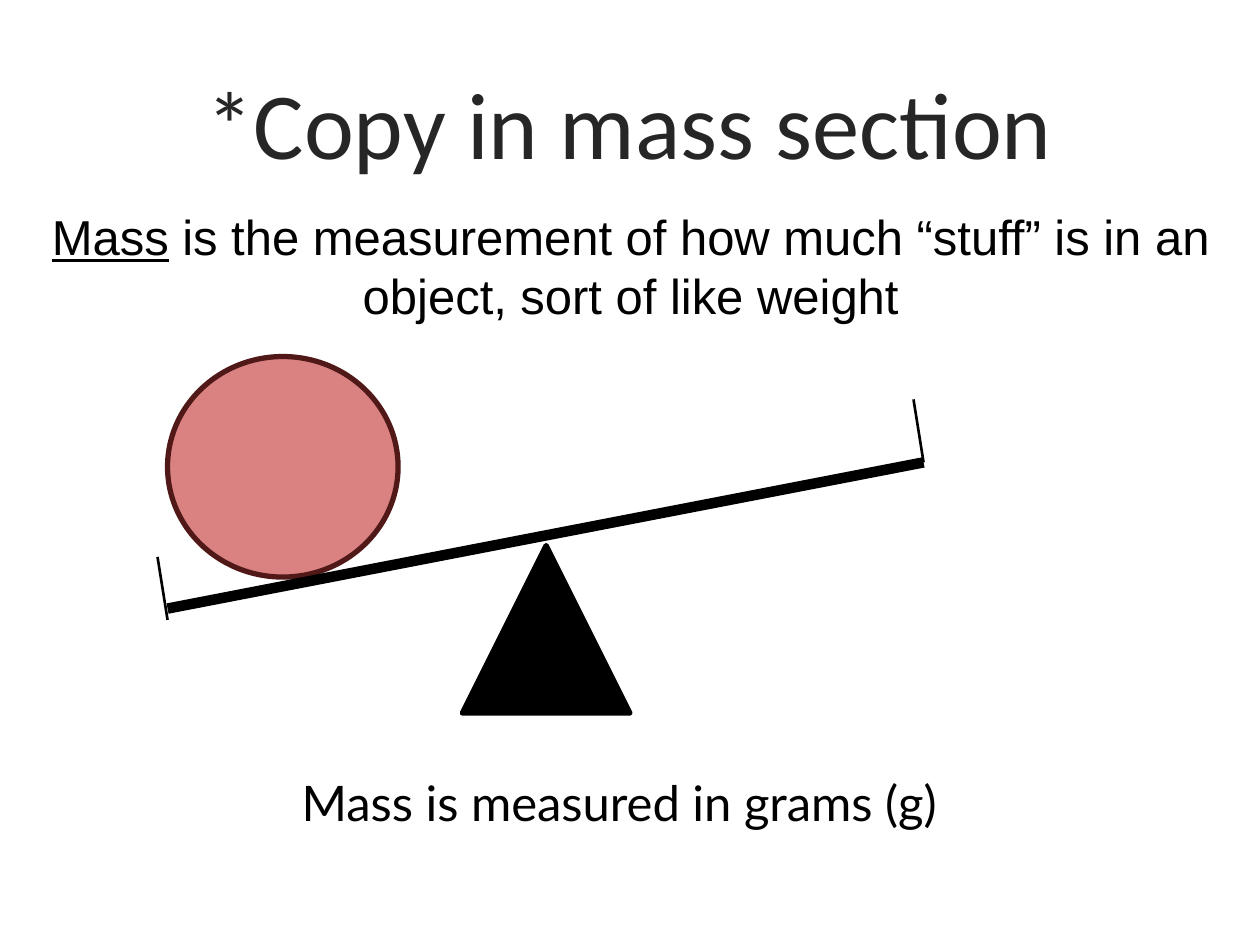
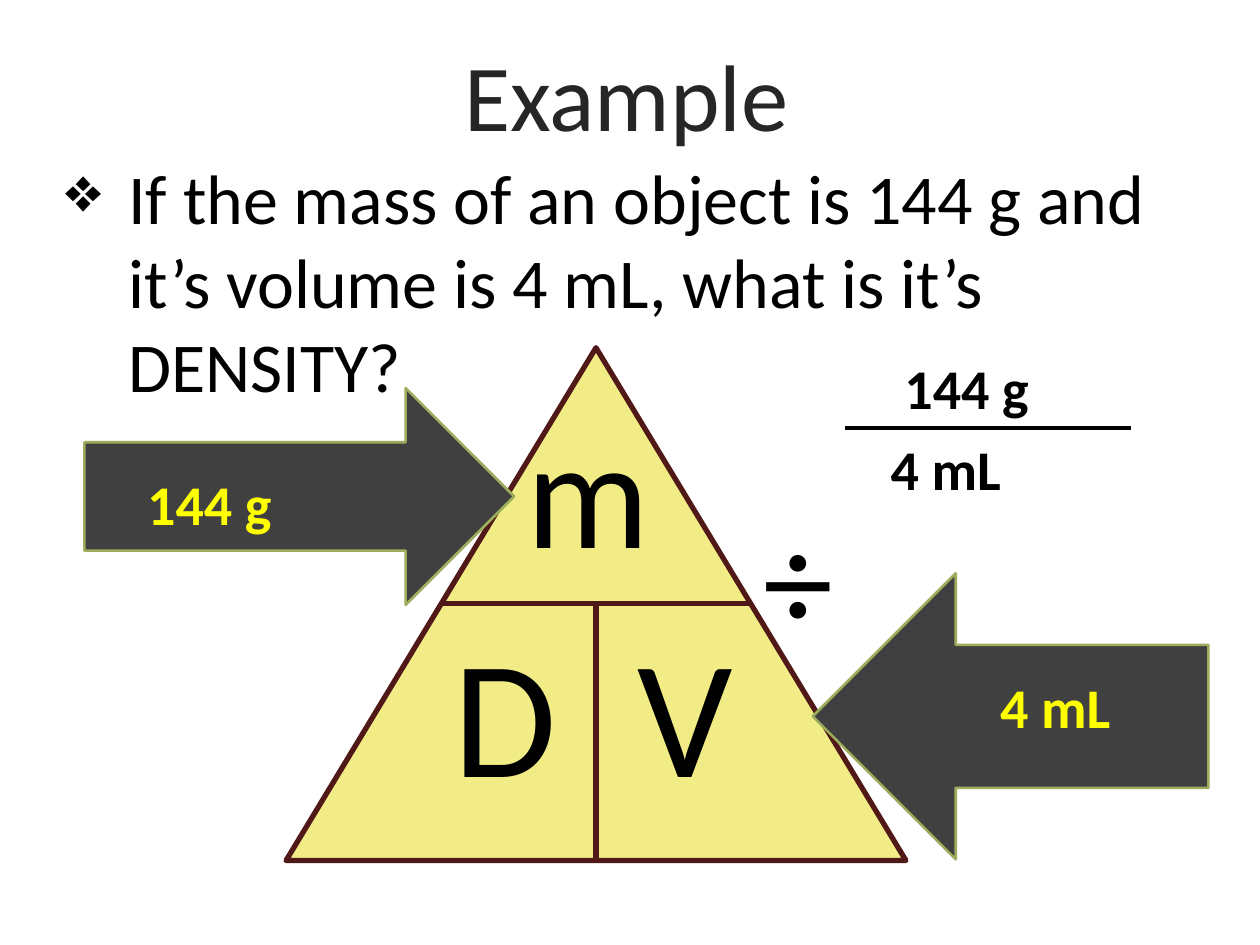
from dataclasses import dataclass

from lxml import etree
from pptx import Presentation
from pptx import util as u
from pptx.dml.color import RGBColor
from pptx.enum import shapes, text
from pptx.oxml.ns import qn

EMU_PER_PX = 9144  # 100 px to the inch


@dataclass(frozen=True)
class Theme:
    ink: str = "000000"
    title: str = "262626"
    maroon: str = "511818"
    ball: str = "DA8282"
    formula: str = "F2EC86"
    arrow: str = "404040"
    arrow_edge: str = "9CAE5C"
    known: str = "FFFF00"
    font: str = "Calibri"
    definition_font: str = "Arial"
    unit_font: str = "Lato"
    title_size: int = 54
    question_size: int = 40
    note_size: int = 28
    value_size: int = 32
    letter_size: int = 96
    top_letter_size: int = 88
    sign_size: int = 80


THEME = Theme()


@dataclass(frozen=True)
class Box:
    left: int
    top: int
    width: int
    height: int


@dataclass(frozen=True)
class Label:
    words: str
    box: Box
    size: int
    color: str = THEME.ink
    font: str = THEME.font
    bold: bool = False
    centered: bool = False
    middle: bool = False
    wrap: bool = True


@dataclass(frozen=True)
class Figure:
    preset: shapes.MSO_SHAPE
    box: Box
    fill: str
    edge: str
    edge_width: float = 3
    rotation: int = 0


@dataclass(frozen=True)
class Stroke:
    start: tuple[int, int]
    end: tuple[int, int]
    color: str = THEME.ink
    width: float = 3


def px(length: int) -> u.Emu:
    return u.Emu(length * EMU_PER_PX)


def place(box: Box) -> tuple[u.Emu, ...]:
    return px(box.left), px(box.top), px(box.width), px(box.height)


def style_line(line, color: str, width: float) -> None:
    line.color.rgb = RGBColor.from_string(color)
    line.width = u.Pt(width)


def draw_label(slide, label: Label):
    """Draw one paragraph of text and return the paragraph."""
    frame = slide.shapes.add_textbox(*place(label.box)).text_frame
    frame.word_wrap = label.wrap
    if label.middle:
        frame.vertical_anchor = text.MSO_ANCHOR.MIDDLE
    frame.text = label.words
    paragraph = frame.paragraphs[0]
    if label.centered:
        paragraph.alignment = text.PP_ALIGN.CENTER
    for run in paragraph.runs:
        style_run(run, label)
    return paragraph


def style_run(run, label: Label) -> None:
    run.font.name = label.font
    run.font.size = u.Pt(label.size)
    run.font.bold = label.bold
    run.font.color.rgb = RGBColor.from_string(label.color)


def draw_figure(slide, figure: Figure) -> None:
    shape = slide.shapes.add_shape(figure.preset, *place(figure.box))
    shape.shadow.inherit = False
    shape.rotation = figure.rotation
    shape.fill.solid()
    shape.fill.fore_color.rgb = RGBColor.from_string(figure.fill)
    style_line(shape.line, figure.edge, figure.edge_width)
    etree.SubElement(shape.line._ln, qn("a:round"))


def draw_stroke(slide, stroke: Stroke) -> None:
    connector = slide.shapes.add_connector(
        shapes.MSO_CONNECTOR.STRAIGHT,
        *map(px, stroke.start + stroke.end),
    )
    style_line(connector.line, stroke.color, stroke.width)
    etree.SubElement(connector._element.spPr, qn("a:effectLst"))


def draw_title(slide, words: str, left: int, top: int) -> None:
    draw_label(slide, Label(words, Box(left, top, 841, 125), THEME.title_size,
                            THEME.title, centered=True, middle=True))


def add_bullet(paragraph, mark: str, indent: int, percent: int) -> None:
    properties = paragraph._p.get_or_add_pPr()
    properties.set("marL", str(px(indent)))
    properties.set("indent", str(px(-indent)))
    etree.SubElement(properties, qn("a:buSzPct"), val=str(percent * 1000))
    etree.SubElement(properties, qn("a:buChar"), char=mark)


def value(words: str, box: Box, color: str = THEME.ink) -> Label:
    return Label(words, box, THEME.value_size, color, bold=True)


def build_mass(slide) -> None:
    draw_title(slide, "*Copy in mass section", 79, 34)
    definition = Label("Mass", Box(17, 159, 967, 576), THEME.note_size,
                       font=THEME.definition_font, centered=True)
    sentence = draw_label(slide, definition)
    sentence.runs[0].font.underline = True
    meaning = sentence.add_run()
    meaning.text = (" is the measurement of how much “stuff” is in an object, "
                    "sort of like weight")
    style_run(meaning, definition)

    low_end, high_end = (133, 483), (733, 367)
    draw_figure(slide, Figure(shapes.MSO_SHAPE.OVAL, Box(133, 283, 183, 175),
                              THEME.ball, THEME.maroon))
    draw_stroke(slide, Stroke(low_end, high_end, width=6))
    draw_figure(slide, Figure(shapes.MSO_SHAPE.ISOSCELES_TRIANGLE,
                              Box(367, 433, 133, 133), THEME.ink, THEME.ink))
    for x, y in ((133, 492), high_end):
        draw_stroke(slide, Stroke((x, y), (x - 8, y - 50), width=1.5))

    draw_label(slide, Label("Mass is measured in grams (g)",
                            Box(175, 608, 633, 57), THEME.note_size,
                            font=THEME.unit_font, centered=True))


def build_example(slide) -> None:
    draw_title(slide, "Example ", 85, 12)
    question = draw_label(slide, Label(
        "If the mass of an object is 144 g and it’s volume is 4 mL, "
        "what is it’s DENSITY?",
        Box(42, 118, 942, 500), THEME.question_size))
    add_bullet(question, "❖", indent=50, percent=90)

    pyramid = Box(227, 276, 492, 407)
    center = pyramid.left + pyramid.width // 2
    base = pyramid.top + pyramid.height
    divide = 479
    draw_figure(slide, Figure(shapes.MSO_SHAPE.ISOSCELES_TRIANGLE, pyramid,
                              THEME.formula, THEME.maroon))
    half_width = pyramid.width // 4
    for start, end in (
        ((center - half_width, divide), (center + half_width, divide)),
        ((center, base), (center, divide)),
    ):
        draw_stroke(slide, Stroke(start, end, THEME.maroon))
    for letter, box, size in (
        ("D", Box(350, divide, 130, 172), THEME.letter_size),
        ("V", Box(496, divide, 114, 172), THEME.letter_size),
        ("m", Box(408, 308, 124, 158), THEME.top_letter_size),
    ):
        draw_label(slide, Label(letter, box, size, wrap=False))

    mass, volume = "144 g", "4 mL"
    for words, arrow, rotation, words_box in (
        (mass, Box(67, 308, 341, 172), 0, Box(107, 368, 153, 64)),
        (volume, Box(645, 455, 314, 227), 180, Box(784, 529, 174, 64)),
    ):
        draw_figure(slide, Figure(shapes.MSO_SHAPE.RIGHT_ARROW, arrow, THEME.arrow,
                                  THEME.arrow_edge, 1.5, rotation))
        draw_label(slide, value(words, words_box, THEME.known))

    draw_label(slide, Label("÷", Box(596, 385, 330, 145), THEME.sign_size))
    draw_label(slide, value(mass, Box(708, 276, 153, 64)))
    draw_label(slide, value(volume, Box(697, 340, 174, 64)))
    draw_stroke(slide, Stroke((671, 340), (898, 340), width=2.25))


def main() -> None:
    deck = Presentation()
    deck.slide_width, deck.slide_height = px(1000), px(750)
    blank = deck.slide_layouts[6]
    for build in (build_mass, build_example):
        build(deck.slides.add_slide(blank))
    deck.save("out.pptx")


if __name__ == "__main__":
    main()
